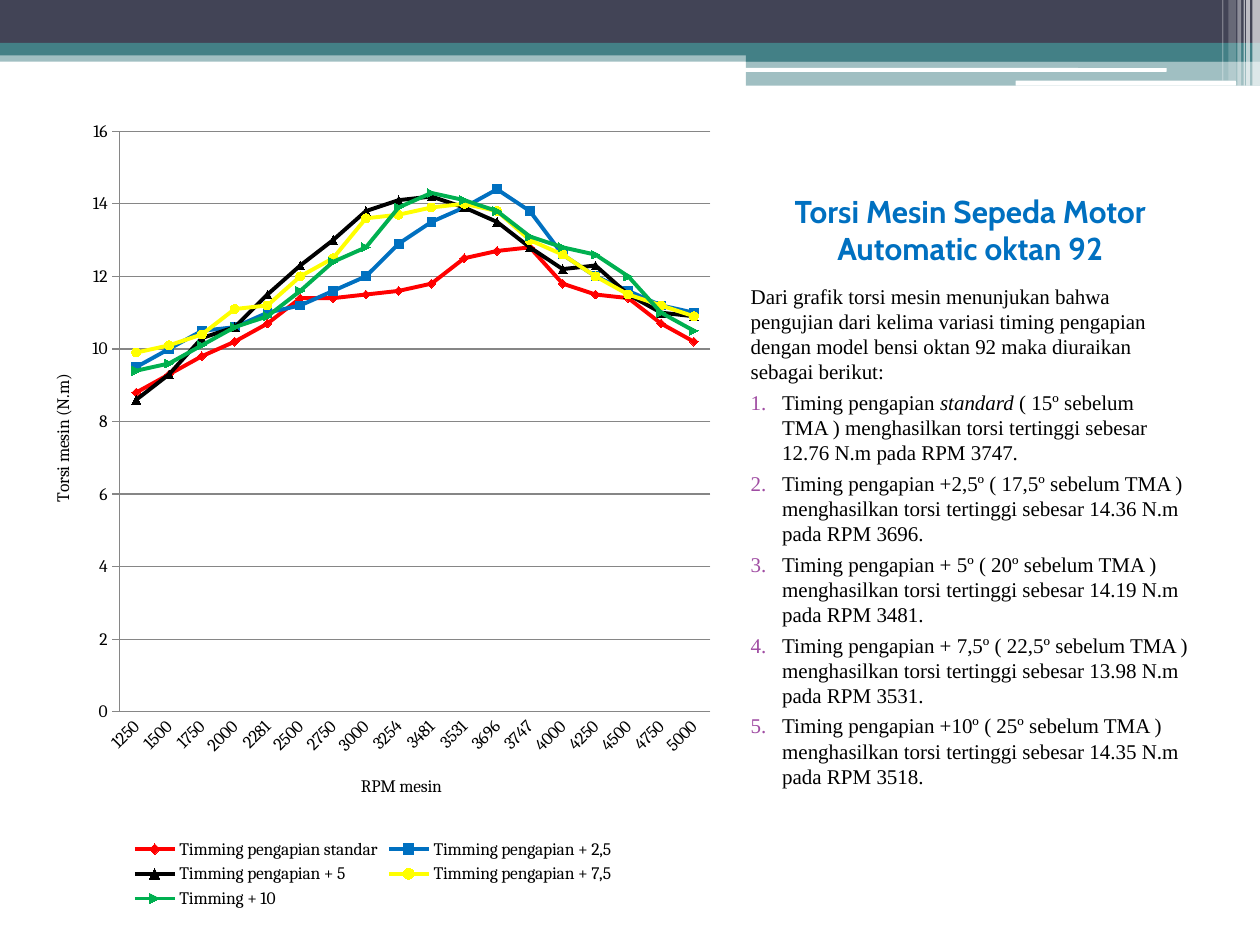
from lxml.etree import SubElement
from pptx import Presentation
from pptx.chart.data import CategoryChartData
from pptx.dml.color import RGBColor
from pptx.enum.chart import XL_CHART_TYPE, XL_LEGEND_POSITION, XL_MARKER_STYLE, XL_TICK_MARK
from pptx.enum.shapes import MSO_SHAPE
from pptx.enum.text import MSO_ANCHOR, PP_ALIGN
from pptx.oxml import parse_xml
from pptx.oxml.ns import nsdecls, qn
from pptx.util import Inches, Pt

WIDTH, HEIGHT = Inches(10), Inches(7.5)
COLS, ROWS = 1000, 750
NAVY, TEAL, WHITE, BLACK = "424456", "438086", "FFFFFF", "000000"
BLUE, PURPLE, GREY = "0070C0", "A04DA3", "868686"

# column, row, columns, rows, colour, opacity in percent
BANDS = [
    (0, 40, 1000, 9, TEAL, 50),
    (0, 0, 1000, 34, NAVY, 100),
    (0, 34, 1000, 10, TEAL, 100),
    (592, 39, 408, 10, TEAL, 100),
    (592, 48, 408, 20, TEAL, 50),
]
RULES = [(591, 54, 335, 3, WHITE, 100), (806, 64, 175, 4, WHITE, 100)]
# column, columns, rows, opacity in percent
STRIPES = [(994, 6, 68, 65), (989, 3, 68, 65), (987, 1, 68, 60),
           (982, 3, 68, 40), (975, 6, 64, 20), (970, 1, 64, 30)]

RPM = ["1250", "1500", "1750", "2000", "2281", "2500", "2750", "3000", "3254",
       "3481", "3531", "3696", "3747", "4000", "4250", "4500", "4750", "5000"]
TORQUE = [
    ("Timming pengapian standar", "FF0000", XL_MARKER_STYLE.DIAMOND,
     [8.8, 9.3, 9.8, 10.2, 10.7, 11.4, 11.4, 11.5, 11.6,
      11.8, 12.5, 12.7, 12.8, 11.8, 11.5, 11.4, 10.7, 10.2]),
    ("Timming pengapian + 2,5", BLUE, XL_MARKER_STYLE.SQUARE,
     [9.5, 10, 10.5, 10.6, 11, 11.2, 11.6, 12, 12.9,
      13.5, 13.9, 14.4, 13.8, 12.6, 12, 11.6, 11.2, 11]),
    ("Timming pengapian + 5", BLACK, XL_MARKER_STYLE.TRIANGLE,
     [8.6, 9.3, 10.3, 10.6, 11.5, 12.3, 13, 13.8, 14.1,
      14.2, 13.9, 13.5, 12.8, 12.2, 12.3, 11.5, 11, 10.9]),
    ("Timming pengapian + 7,5", "FFFF00", XL_MARKER_STYLE.CIRCLE,
     [9.9, 10.1, 10.4, 11.1, 11.2, 12, 12.5, 13.6, 13.7,
      13.9, 14, 13.8, 13, 12.6, 12, 11.5, 11.2, 10.9]),
    ("Timming + 10", "00B050", None,
     [9.4, 9.6, 10.1, 10.6, 10.9, 11.6, 12.4, 12.8, 13.9,
      14.3, 14.1, 13.8, 13.1, 12.8, 12.6, 12, 11, 10.5]),
]

TITLE = "Torsi Mesin Sepeda Motor Automatic oktan 92"
INTRO = ("Dari grafik torsi mesin menunjukan bahwa pengujian dari kelima variasi timing "
         "pengapian dengan model bensi oktan 92 maka diuraikan sebagai berikut:")
# timing, is italic, angle, highest torque, engine speed
RESULTS = [("standard", True, "15º", "12.76", "3747"),
           ("+2,5º", False, "17,5º", "14.36", "3696"),
           ("+ 5º", False, "20º", "14.19", "3481"),
           ("+ 7,5º", False, "22,5º", "13.98", "3531"),
           ("+10º", False, "25º", "14.35", "3518")]


def rgb(color):
    return RGBColor.from_string(color)


def grid(col, row, cols, rows):
    """Turn grid columns and rows into left, top, width and height."""
    return (WIDTH * col // COLS, HEIGHT * row // ROWS,
            WIDTH * cols // COLS, HEIGHT * rows // ROWS)


def add_bar(s, col, row, cols, rows, color, opacity, kind=MSO_SHAPE.RECTANGLE):
    sp = s.shapes.add_shape(kind, *grid(col, row, cols, rows))
    sp.shadow.inherit = False
    sp.line.fill.background()
    sp.fill.solid()
    sp.fill.fore_color.rgb = rgb(color)
    if opacity < 100:
        clr = sp.fill._xPr.find(".//" + qn("a:srgbClr"))
        SubElement(clr, qn("a:alpha"), val=str(opacity * 1000))


def add_text_frame(s, col, row, cols, rows, anchor):
    tf = s.shapes.add_textbox(*grid(col, row, cols, rows)).text_frame
    tf.word_wrap = True
    tf.vertical_anchor = anchor
    return tf


def style_font(font, size, name, color, bold=False):
    font.size, font.name, font.bold = Pt(size), name, bold
    font.color.rgb = rgb(color)


def add_run(p, text, size=12, name="Times New Roman", color=BLACK, bold=False, italic=False):
    r = p.add_run()
    r.text = text
    style_font(r.font, size, name, color, bold)
    r.font.italic = italic


def format_paragraph(p, margin, indent, numbered=False):
    p.space_before = Pt(3)
    pPr = p._p.get_or_add_pPr()
    pPr.set("marL", str(Inches(margin)))
    pPr.set("indent", str(Inches(indent)))
    if numbered:
        SubElement(SubElement(pPr, qn("a:buClr")), qn("a:srgbClr"), val=PURPLE)
        SubElement(pPr, qn("a:buAutoNum"), type="arabicPeriod")


def add_title(s):
    p = add_text_frame(s, 585, 121, 370, 96, MSO_ANCHOR.BOTTOM).paragraphs[0]
    p.alignment = PP_ALIGN.CENTER
    add_run(p, TITLE, 18, "Cabin", BLUE, bold=True)


def add_findings(s):
    tf = add_text_frame(s, 585, 220, 370, 505, MSO_ANCHOR.TOP)
    format_paragraph(tf.paragraphs[0], 0.01, 0)
    add_run(tf.paragraphs[0], INTRO)
    for timing, italic, angle, torque, speed in RESULTS:
        p = tf.add_paragraph()
        format_paragraph(p, 0.26, -0.25, numbered=True)
        tail = (f" ( {angle} sebelum TMA ) menghasilkan torsi tertinggi "
                f"sebesar {torque} N.m pada RPM {speed}.")
        if italic:
            add_run(p, "Timing pengapian ")
            add_run(p, timing, italic=True)
            add_run(p, tail)
        else:
            add_run(p, f"Timing pengapian {timing}{tail}")


def manual_layout(x, y, w, h, target=""):
    """Build a chart layout from shares of the chart's size."""
    inner = f'<c:layoutTarget val="{target}"/>' if target else ""
    return parse_xml(
        f'<c:layout {nsdecls("c")}><c:manualLayout>{inner}'
        '<c:xMode val="edge"/><c:yMode val="edge"/>'
        f'<c:x val="{x}"/><c:y val="{y}"/><c:w val="{w}"/><c:h val="{h}"/>'
        '</c:manualLayout></c:layout>')


def style_axis(axis, title, tick, label_turn, title_turn):
    """Set the axis title, ticks and line; turns are in degrees."""
    tf = axis.axis_title.text_frame
    add_run(tf.paragraphs[0], title, 10, "Cambria")
    tf._txBody.find(qn("a:bodyPr")).set("rot", str(title_turn * 60000))
    style_font(axis.tick_labels.font, 10, "Cambria", BLACK)
    labels = axis._element.find(qn("c:txPr"))
    labels.find(qn("a:bodyPr")).set("rot", str(label_turn * 60000))
    axis.major_tick_mark, axis.minor_tick_mark = tick, XL_TICK_MARK.NONE
    axis.format.line.color.rgb = rgb(GREY)


def style_series(series, color, marker):
    series.smooth = False
    series.format.line.color.rgb = rgb(color)
    series.format.line.width = Pt(2.25)
    series.marker.size = 5
    if marker is not None:
        series.marker.style = marker
        series.marker.format.fill.solid()
        series.marker.format.fill.fore_color.rgb = rgb(color)
        series.marker.format.line.color.rgb = rgb(color)


def add_torque_chart(s):
    data = CategoryChartData()
    data.categories = RPM
    for name, _, _, values in TORQUE:
        data.add_series(name, values)
    chart = s.shapes.add_chart(XL_CHART_TYPE.LINE_MARKERS, *grid(17, 85, 558, 640), data).chart
    style_font(chart.font, 10, "Cambria", BLACK)
    chart.has_title = False
    chart.plots[0].vary_by_categories = False
    for series, (_, color, marker, _) in zip(chart.plots[0].series, TORQUE):
        style_series(series, color, marker)

    style_axis(chart.category_axis, "RPM mesin", XL_TICK_MARK.NONE, -45, 0)
    axis = chart.value_axis
    style_axis(axis, "Torsi mesin (N.m)", XL_TICK_MARK.OUTSIDE, 0, -90)
    axis.minimum_scale, axis.maximum_scale, axis.major_unit = 0, 16, 2
    axis.major_gridlines.format.line.color.rgb = rgb(GREY)

    chart.has_legend = True
    chart.legend.position = XL_LEGEND_POSITION.BOTTOM
    chart.legend.include_in_layout = False
    position = chart.legend._element.find(qn("c:legendPos"))
    position.addnext(manual_layout(0.15, 0.9, 0.72, 0.1))
    area = chart._chartSpace.chart.plotArea
    for old in area.findall(qn("c:layout")):
        area.remove(old)
    area.insert(0, manual_layout(0.14, 0.03, 0.84, 0.72, "inner"))


def main():
    prs = Presentation()
    prs.slide_width, prs.slide_height = WIDTH, HEIGHT
    s = prs.slides.add_slide(prs.slide_layouts[6])
    for band in BANDS:
        add_bar(s, *band)
    for rule in RULES:
        add_bar(s, *rule, kind=MSO_SHAPE.ROUNDED_RECTANGLE)
    for col, cols, rows, opacity in STRIPES:
        add_bar(s, col, 0, cols, rows, WHITE, opacity)
    add_title(s)
    add_findings(s)
    add_torque_chart(s)
    prs.save("out.pptx")


if __name__ == "__main__":
    main()
